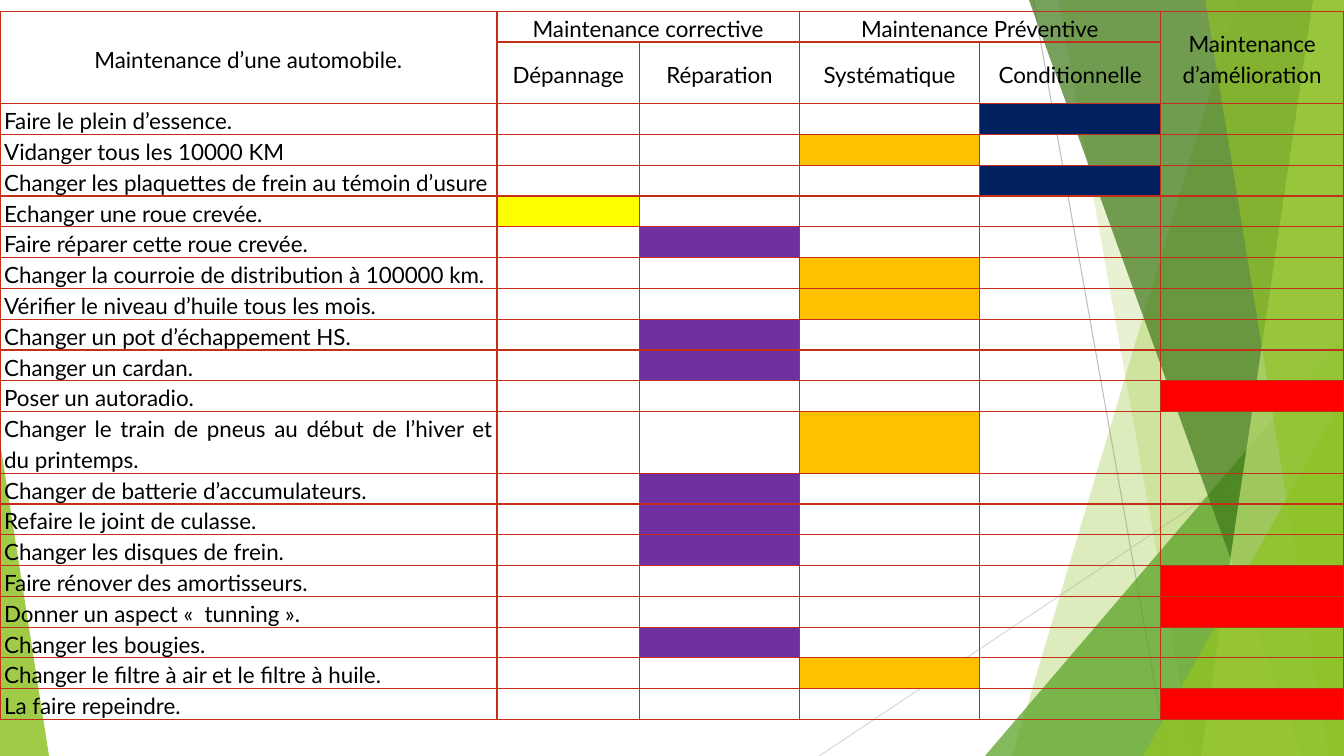
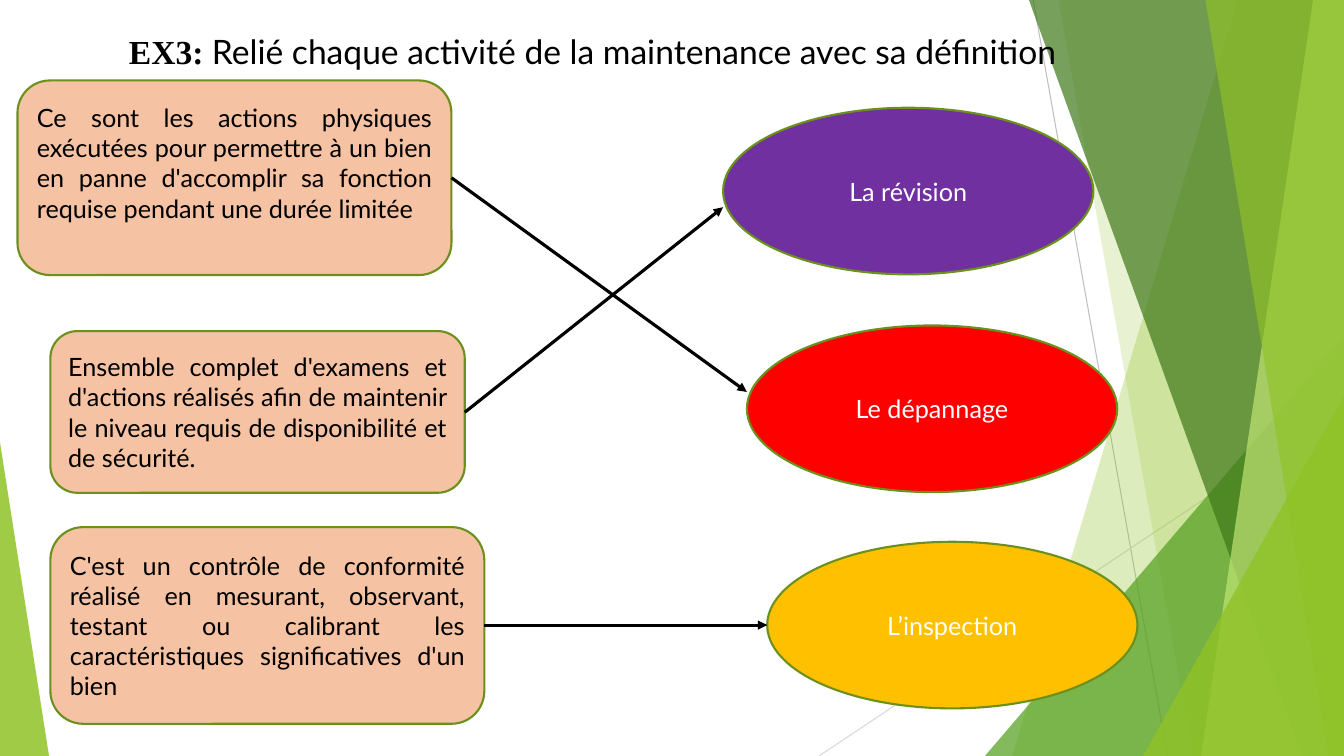
import dataclasses

import lxml.etree
import pptx
import pptx.dml.color
import pptx.enum.shapes
import pptx.enum.text
import pptx.oxml.ns
import pptx.shapes.base
import pptx.slide
import pptx.table
import pptx.text.text
import pptx.util

Pt = pptx.util.Pt
qn = pptx.oxml.ns.qn
Shape = pptx.enum.shapes.MSO_SHAPE
Align = pptx.enum.text.PP_ALIGN
Anchor = pptx.enum.text.MSO_ANCHOR

WIDTH, HEIGHT = 960, 540
BODY_FONT = "Lato"
COLOURS = {
    "black": "000000", "white": "FFFFFF", "grey": "BFBFBF", "pale_grey": "D9D9D9",
    "green": "90C226", "mid_green": "54A021", "dark_green": "3F7819", "light_green": "C0E474",
    "outline": "6B901C", "border": "C42F1A", "peach": "F5C2A3", "navy": "002060",
    "amber": "FFC000", "yellow": "FFFF00", "purple": "7030A0", "red": "FF0000",
}


@dataclasses.dataclass(frozen=True)
class Line:
    start: tuple[float, float]
    end: tuple[float, float]
    colour: str = "black"
    weight: float = 2.25
    arrow: bool = True


@dataclasses.dataclass(frozen=True)
class Band:
    top_left: float
    bottom_left: float
    colour: str
    opacity: int


@dataclasses.dataclass(frozen=True)
class Wedge:
    left: float
    top: float
    width: float
    apex: float
    colour: str
    opacity: int


@dataclasses.dataclass(frozen=True)
class Card:
    kind: Shape
    left: float
    top: float
    width: float
    height: float
    fill: str
    text: str
    text_colour: str
    align: Align
    lift: float = 0


@dataclasses.dataclass(frozen=True)
class Heading:
    row: int
    column: int
    last_row: int
    last_column: int
    lines: tuple[str, ...]


BACKDROP_LINES = (
    Line((738, 0), (834, HEIGHT), "grey", 0.75, False),
    Line((WIDTH, 290), (585, HEIGHT), "pale_grey", 0.75, False),
)
BACKDROP = (
    Band(884, 723, "green", 30),
    Band(756, 852, "green", 20),
    Wedge(703.5, 240, 256.5, 1, "mid_green", 72),
    Band(735, 930, "dark_green", 70),
    Band(938, 858, "light_green", 70),
    Band(861, 949, "green", 65),
    Wedge(816.5, 283, 143.5, 1, "green", 80),
    Wedge(0, 316, 35, 0, "green", 85),
)

TABLE_TOP = 8
ROW_HEIGHT = 22
DOUBLE_ROWS = (1, 12)
COLUMN_WIDTHS = (355, 102, 114, 129, 129, 131)
COLUMN_FILLS = ("", "yellow", "purple", "amber", "navy", "red")
HEADINGS = (
    Heading(0, 0, 1, 0, ("Maintenance d’une automobile.",)),
    Heading(0, 1, 0, 2, ("Maintenance corrective",)),
    Heading(0, 3, 0, 4, ("Maintenance Préventive",)),
    Heading(0, 5, 1, 5, ("Maintenance", "d’amélioration")),
    Heading(1, 1, 1, 1, ("Dépannage",)),
    Heading(1, 2, 1, 2, ("Réparation",)),
    Heading(1, 3, 1, 3, ("Systématique",)),
    Heading(1, 4, 1, 4, ("Conditionnelle",)),
)
TASKS = (
    ("Faire le plein d’essence.", 4),
    ("Vidanger tous les 10000 KM", 3),
    ("Changer les plaquettes de frein au témoin d’usure", 4),
    ("Echanger une roue crevée.", 1),
    ("Faire réparer cette roue crevée.", 2),
    ("Changer la courroie de distribution à 100000 km.", 3),
    ("Vérifier le niveau d’huile tous les mois.", 3),
    ("Changer un pot d’échappement HS.", 2),
    ("Changer un cardan.", 2),
    ("Poser un autoradio.", 5),
    ("Changer le train de pneus au début de l’hiver et du printemps.", 3),
    ("Changer de batterie d’accumulateurs.", 2),
    ("Refaire le joint de culasse.", 2),
    ("Changer les disques de frein.", 2),
    ("Faire rénover des amortisseurs.", 5),
    ("Donner un aspect «  tunning ».", 5),
    ("Changer les bougies.", 2),
    ("Changer le filtre à air et le filtre à huile.", 3),
    ("La faire repeindre.", 5),
)


def definition(left: float, top: float, width: float, height: float, text: str, lift: float = 0) -> Card:
    return Card(Shape.ROUNDED_RECTANGLE, left, top, width, height, "peach", text, "black", Align.JUSTIFY, lift)


def activity(left: float, top: float, fill: str, text: str) -> Card:
    return Card(Shape.OVAL, left, top, 264.5, 119, fill, text, "white", Align.CENTER)


CARDS = (
    definition(12.5, 57.5, 310, 139, "Ce sont les actions physiques exécutées pour permettre à un bien en panne "
               "d'accomplir sa fonction requise pendant une durée limitée", 21.6),
    definition(36, 236.5, 296, 115.5, "Ensemble complet d'examens et d'actions réalisés afin de maintenir "
               "le niveau requis de disponibilité et de sécurité."),
    definition(36, 376.5, 310, 140.5, "C'est un contrôle de conformité réalisé en mesurant, observant, testant "
               "ou calibrant les caractéristiques significatives d'un bien"),
    activity(516.5, 77, "purple", "La révision"),
    activity(533.5, 232.5, "red", "Le dépannage"),
    activity(548, 387, "amber", "L’inspection"),
)
ARROWS = (
    Line((322.5, 127), (533.5, 280)),
    Line((346, 446.5), (548, 446.5)),
    Line((332, 294.5), (516.5, 148)),
)


def rgb(name: str) -> pptx.dml.color.RGBColor:
    return pptx.dml.color.RGBColor.from_string(COLOURS[name])


def add_run(paragraph: pptx.text.text._Paragraph, text: str, size: float,
            colour: str = "black", font: str = BODY_FONT, bold: bool = False) -> None:
    run = paragraph.add_run()
    run.text = text
    run.font.name = font
    run.font.size = Pt(size)
    run.font.bold = bold
    run.font.color.rgb = rgb(colour)


def paint(shape: pptx.shapes.base.BaseShape, colour: str, opacity: int) -> None:
    shape.shadow.inherit = False
    shape.line.fill.background()
    shape.fill.solid()
    shape.fill.fore_color.rgb = rgb(colour)
    colour_element = shape._element.spPr.find(qn("a:solidFill"))[0]
    lxml.etree.SubElement(colour_element, qn("a:alpha"), val=str(opacity * 1000))


def draw_line(slide: pptx.slide.Slide, line: Line) -> None:
    connector = slide.shapes.add_connector(
        pptx.enum.shapes.MSO_CONNECTOR.STRAIGHT, *map(Pt, line.start + line.end))
    connector.line.color.rgb = rgb(line.colour)
    connector.line.width = Pt(line.weight)
    if line.arrow:
        lxml.etree.SubElement(connector.line._get_or_add_ln(), qn("a:tailEnd"), type="triangle")
    lxml.etree.SubElement(connector._element.spPr, qn("a:effectLst"))


def draw_band(slide: pptx.slide.Slide, band: Band) -> None:
    builder = slide.shapes.build_freeform(Pt(band.top_left), 0)
    corners = ((WIDTH, 0), (WIDTH, HEIGHT), (band.bottom_left, HEIGHT))
    builder.add_line_segments([(Pt(x), Pt(y)) for x, y in corners], close=True)
    paint(builder.convert_to_shape(), band.colour, band.opacity)


def draw_wedge(slide: pptx.slide.Slide, wedge: Wedge) -> None:
    shape = slide.shapes.add_shape(
        Shape.ISOSCELES_TRIANGLE, Pt(wedge.left), Pt(wedge.top), Pt(wedge.width), Pt(HEIGHT - wedge.top))
    shape.adjustments[0] = wedge.apex
    paint(shape, wedge.colour, wedge.opacity)


def add_slide(presentation: pptx.presentation.Presentation) -> pptx.slide.Slide:
    slide = presentation.slides.add_slide(presentation.slide_layouts[6])
    for line in BACKDROP_LINES:
        draw_line(slide, line)
    for part in BACKDROP:
        if isinstance(part, Band):
            draw_band(slide, part)
        else:
            draw_wedge(slide, part)
    return slide


def format_cell(cell: pptx.table._Cell) -> None:
    cell.margin_left = cell.margin_right = Pt(3)
    cell.margin_top = cell.margin_bottom = 0
    cell.vertical_anchor = Anchor.MIDDLE
    cell.fill.background()
    properties = cell._tc.get_or_add_tcPr()
    for index, side in enumerate(("lnL", "lnR", "lnT", "lnB")):
        border = lxml.etree.Element(qn(f"a:{side}"), w=str(Pt(1)))
        fill = lxml.etree.SubElement(border, qn("a:solidFill"))
        lxml.etree.SubElement(fill, qn("a:srgbClr"), val=COLOURS["border"])
        properties.insert(index, border)


def write_cell(cell: pptx.table._Cell, lines: tuple[str, ...], align: Align) -> None:
    for index, text in enumerate(lines):
        paragraph = cell.text_frame.add_paragraph() if index else cell.text_frame.paragraphs[0]
        paragraph.alignment = align
        paragraph.line_spacing = 1.15
        add_run(paragraph, text, 16)


def draw_table(slide: pptx.slide.Slide) -> None:
    row_count = len(TASKS) + 2
    frame = slide.shapes.add_table(
        row_count, len(COLUMN_WIDTHS), 0, Pt(TABLE_TOP), Pt(WIDTH),
        Pt(ROW_HEIGHT * (row_count + len(DOUBLE_ROWS))))
    table = frame.table
    table.first_row = table.horz_banding = False
    for column, width in zip(table.columns, COLUMN_WIDTHS):
        column.width = Pt(width)
    for index, row in enumerate(table.rows):
        row.height = Pt(ROW_HEIGHT * (2 if index in DOUBLE_ROWS else 1))
    for cell in table.iter_cells():
        format_cell(cell)
    for heading in HEADINGS:
        cell = table.cell(heading.row, heading.column)
        last_cell = table.cell(heading.last_row, heading.last_column)
        if (heading.row, heading.column) != (heading.last_row, heading.last_column):
            cell.merge(last_cell)
        write_cell(cell, heading.lines, Align.CENTER)
    for row, (task, column) in enumerate(TASKS, start=2):
        write_cell(table.cell(row, 0), (task,), Align.JUSTIFY)
        answer = table.cell(row, column)
        answer.fill.solid()
        answer.fill.fore_color.rgb = rgb(COLUMN_FILLS[column])


def draw_card(slide: pptx.slide.Slide, card: Card) -> None:
    shape = slide.shapes.add_shape(
        card.kind, Pt(card.left), Pt(card.top), Pt(card.width), Pt(card.height))
    shape.shadow.inherit = False
    shape.fill.solid()
    shape.fill.fore_color.rgb = rgb(card.fill)
    shape.line.color.rgb = rgb("outline")
    shape.line.width = Pt(1.5)
    frame = shape.text_frame
    frame.word_wrap = True
    frame.vertical_anchor = Anchor.MIDDLE
    frame.margin_bottom = Pt(3.6 + card.lift)
    paragraph = frame.paragraphs[0]
    paragraph.alignment = card.align
    add_run(paragraph, card.text, 18, card.text_colour)


def draw_title(slide: pptx.slide.Slide) -> None:
    frame = slide.shapes.add_textbox(Pt(85), Pt(14.5), Pt(713), Pt(41)).text_frame
    frame.word_wrap = False
    paragraph = frame.paragraphs[0]
    paragraph.line_spacing = 1.15
    add_run(paragraph, "EX3: ", 24, font="Times New Roman", bold=True)
    add_run(paragraph, "Relié chaque activité de la maintenance avec sa définition", 24)


def main() -> None:
    presentation = pptx.Presentation()
    presentation.slide_width = Pt(WIDTH)
    presentation.slide_height = Pt(HEIGHT)
    draw_table(add_slide(presentation))
    matching = add_slide(presentation)
    draw_title(matching)
    for card in CARDS:
        draw_card(matching, card)
    for arrow in ARROWS:
        draw_line(matching, arrow)
    presentation.save("out.pptx")


if __name__ == "__main__":
    main()
